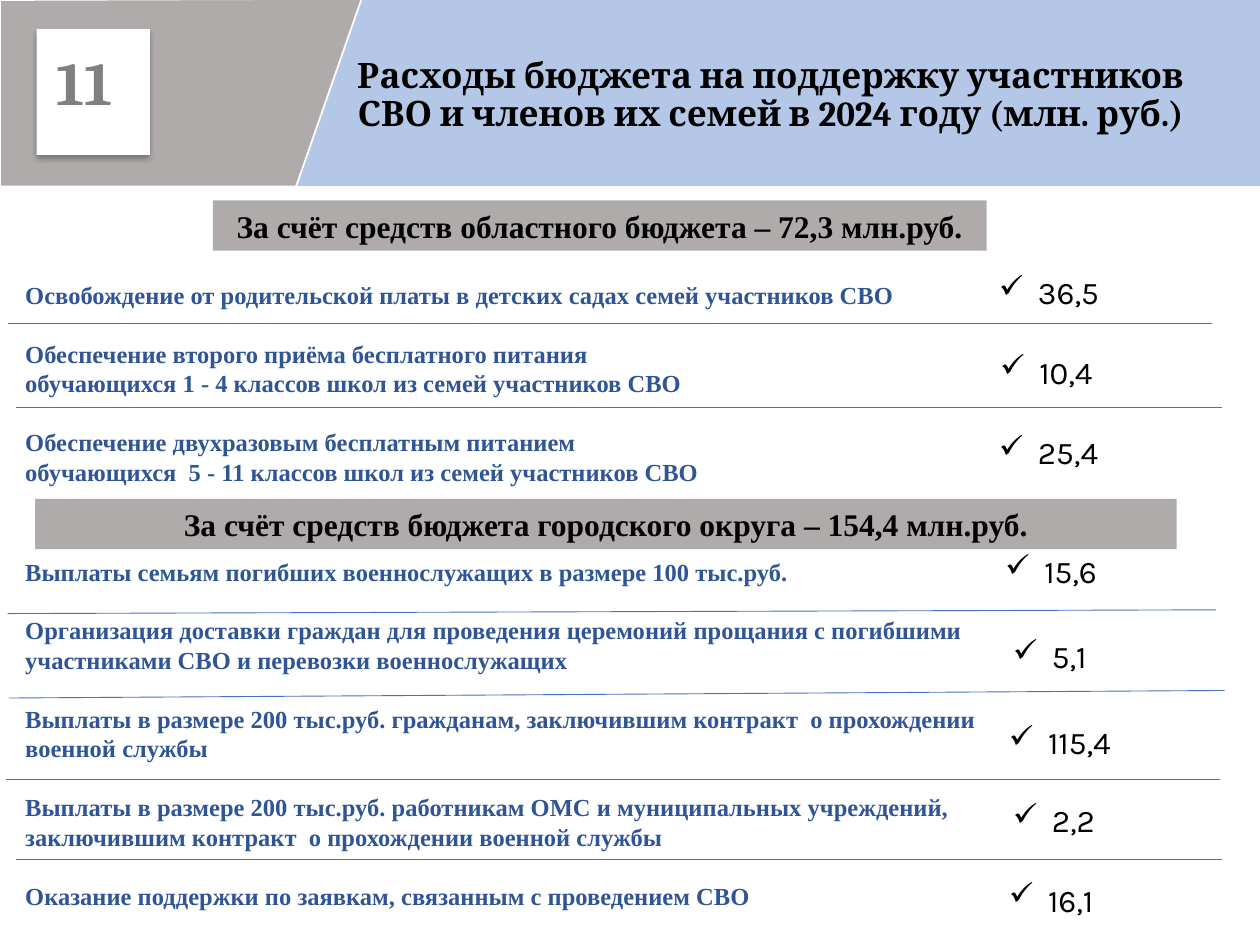
import pptx
import pptx.util
import pptx.dml.color
import pptx.enum.shapes
import pptx.enum.text
import pptx.oxml.ns
import lxml.etree

COLUMNS, ROWS = 100, 75
ALIGN = pptx.enum.text.PP_ALIGN
ANCHOR = pptx.enum.text.MSO_ANCHOR
RECTANGLE = pptx.enum.shapes.MSO_SHAPE.RECTANGLE
LINE_PITCH = 16.85

EXPENSES = [
    ("Освобождение от родительской платы в детских садах семей участников СВО", "36,5", 77.3, -0.5),
    ("Обеспечение второго приёма бесплатного питания\v"
     "обучающихся 1 - 4 классов школ из семей участников СВО", "10,4", 77.4, 5.8),
    ("Обеспечение двухразовым бесплатным питанием\v"
     "обучающихся  5 - 11 классов школ из семей участников СВО", "25,4", 77.3, 12.2),
    ("Выплаты семьям погибших военнослужащих в размере 100 тыс.руб.", "15,6", 77.8, 21.6),
    ("Организация доставки граждан для проведения церемоний прощания с погибшими\v"
     "участниками СВО и перевозки военнослужащих", "5,1", 78.4, 28.4),
    ("Выплаты в размере 200 тыс.руб. гражданам, заключившим контракт  о прохождении\v"
     "военной службы", "115,4", 78.1, 35.2),
    ("Выплаты в размере 200 тыс.руб. работникам ОМС и муниципальных учреждений,\v"
     "заключившим контракт  о прохождении военной службы", "2,2", 78.4, 41.4),
    ("Оказание поддержки по заявкам, связанным с проведением СВО", "16,1", 78.1, 47.7),
]
CITY_START = 3
DIVIDERS = [
    (-0.4, 4, 95.2, 4),
    (0.3, 10.6, 96, 10.6),
    (-0.4, 27, 95.5, 26.7),
    (-0.3, 33.7, 96.2, 33.1),
    (-0.5, 40.2, 95.8, 40.2),
    (0.3, 46.5, 96, 46.5),
]

deck = pptx.Presentation()
deck.slide_width = pptx.util.Inches(10)
deck.slide_height = pptx.util.Inches(7.5)


def across(columns):
    return int(deck.slide_width * columns / COLUMNS)


def down(rows):
    return int(deck.slide_height * rows / ROWS)


def span(box):
    left, top, width, height = box
    return across(left), down(top), across(width), down(height)


def color(value):
    return pptx.dml.color.RGBColor.from_string(value)


def paint(shape, fill, outline=None):
    shape.fill.solid()
    shape.fill.fore_color.rgb = color(fill)
    if outline:
        shape.line.color.rgb = color(outline)
        shape.line.width = pptx.util.Pt(1)
    else:
        shape.line.fill.background()


def style(paragraph, face, size, hue, bold=False, align=ALIGN.LEFT):
    paragraph.alignment = align
    paragraph.font.name = face
    paragraph.font.size = pptx.util.Pt(size)
    paragraph.font.bold = bold
    paragraph.font.color.rgb = color(hue)


def child(parent, tag, **attributes):
    return lxml.etree.SubElement(parent, pptx.oxml.ns.qn(tag), attributes)


def indent(paragraph, columns, mark=None):
    properties = paragraph._p.get_or_add_pPr()
    properties.set("marL", str(across(columns)))
    properties.set("indent", str(-across(columns)))
    if mark:
        child(properties, "a:buChar", char=mark)
    else:
        child(properties, "a:buNone")


def place(shape, box):
    shape.left, shape.top, shape.width, shape.height = span(box)


def header(slide, box):
    left, top, width, height = box
    title = slide.shapes.title
    place(title, (left + 18.5, top - 0.3, width - 18.1, height + 0.3))
    paint(title, "B4C7E7", "FFFFFF")
    frame = title.text_frame
    frame.auto_size = pptx.enum.text.MSO_AUTO_SIZE.NONE
    frame.vertical_anchor = ANCHOR.MIDDLE
    frame.margin_left, frame.margin_top = across(4.4), down(1.2)
    frame.text = "Расходы бюджета на поддержку участников\vСВО и членов их семей в 2024 году (млн. руб.)"
    heading = frame.paragraphs[0]
    style(heading, "Cambria", 20, "000000", True, ALIGN.CENTER)
    heading.line_spacing = 0.9

    outline = slide.shapes.build_freeform(across(left), down(top))
    outline.add_line_segments([
        (across(left + 28.7), down(top - 0.1)),
        (across(left + 23.5), down(top + height)),
        (across(left), down(top + height)),
    ], close=True)
    flag = outline.convert_to_shape()
    flag.shadow.inherit = False
    paint(flag, "AFABAB", "FFFFFF")
    page_badge(slide, (left + 2.9, top + 2.3, 9, 10))


def page_badge(slide, box):
    badge = slide.shapes.add_shape(RECTANGLE, *span(box))
    paint(badge, "FFFFFF")
    badge.shadow.inherit = False
    effects = badge._element.spPr.find(pptx.oxml.ns.qn("a:effectLst"))
    shadow = child(effects, "a:outerShdw", blurRad=str(pptx.util.Pt(3.5)), dist=str(pptx.util.Pt(2.2)),
                   dir="5400000", algn="t", rotWithShape="0")
    child(child(shadow, "a:srgbClr", val="000000"), "a:alpha", val="32000")
    frame = badge.text_frame
    frame.vertical_anchor = ANCHOR.TOP
    frame.margin_left, frame.margin_top = across(1.6), down(1.2)
    frame.text = "11"
    style(frame.paragraphs[0], "Cambria", 35, "808080", True)


def banner(slide, box, text):
    bar = slide.shapes.add_shape(RECTANGLE, *span(box))
    bar.shadow.inherit = False
    paint(bar, "AFABAB")
    bar.text_frame.text = text
    style(bar.text_frame.paragraphs[0], "Times New Roman", 18, "000000", True, ALIGN.CENTER)


def amount(slide, box, value):
    frame = slide.shapes.add_textbox(*span(box)).text_frame
    frame.word_wrap = True
    frame.text = value
    style(frame.paragraphs[0], "Karla", 18, "000000")
    indent(frame.paragraphs[0], 3.1, "✓")


def divider(slide, left, top, ends):
    start_x, start_y, end_x, end_y = ends
    rule = slide.shapes.add_connector(
        pptx.enum.shapes.MSO_CONNECTOR.STRAIGHT,
        across(left + start_x), down(top + start_y), across(left + end_x), down(top + end_y))
    rule.line.color.rgb = color("4472C4")
    rule.line.width = pptx.util.Pt(0.5)
    child(rule._element.spPr, "a:effectLst")


def expense_list(slide, box):
    left, top, width, height = box
    body = slide.placeholders[1]
    place(body, box)
    frame = body.text_frame
    frame.auto_size = pptx.enum.text.MSO_AUTO_SIZE.NONE
    frame.vertical_anchor = ANCHOR.TOP
    frame.text = "\n".join(purpose for purpose, *_ in EXPENSES)
    for number, purpose in enumerate(frame.paragraphs):
        style(purpose, "Times New Roman", 14, "2F5597", True)
        purpose.line_spacing = pptx.util.Pt(LINE_PITCH)
        gap = {0: 0, CITY_START: 40.3}.get(number, LINE_PITCH)
        purpose.space_before = pptx.util.Pt(gap)
        purpose.space_after = pptx.util.Pt(0)
        indent(purpose, 0)
    for ends in DIVIDERS:
        divider(slide, left, top, ends)
    for _, value, column, row in EXPENSES:
        amount(slide, (left + column, top + row, 20, 4), value)


def main():
    slide = deck.slides.add_slide(deck.slide_layouts[1])
    header(slide, (0, 0, 100, 14.8))
    expense_list(slide, (1, 21.7, 97.6, 53.3))
    banner(slide, (16.9, 15.9, 61.4, 4), "За счёт средств областного бюджета – 72,3 млн.руб.")
    banner(slide, (2.8, 39.6, 90.6, 4), "За счёт средств бюджета городского округа – 154,4 млн.руб.")
    deck.save("out.pptx")


if __name__ == "__main__":
    main()
